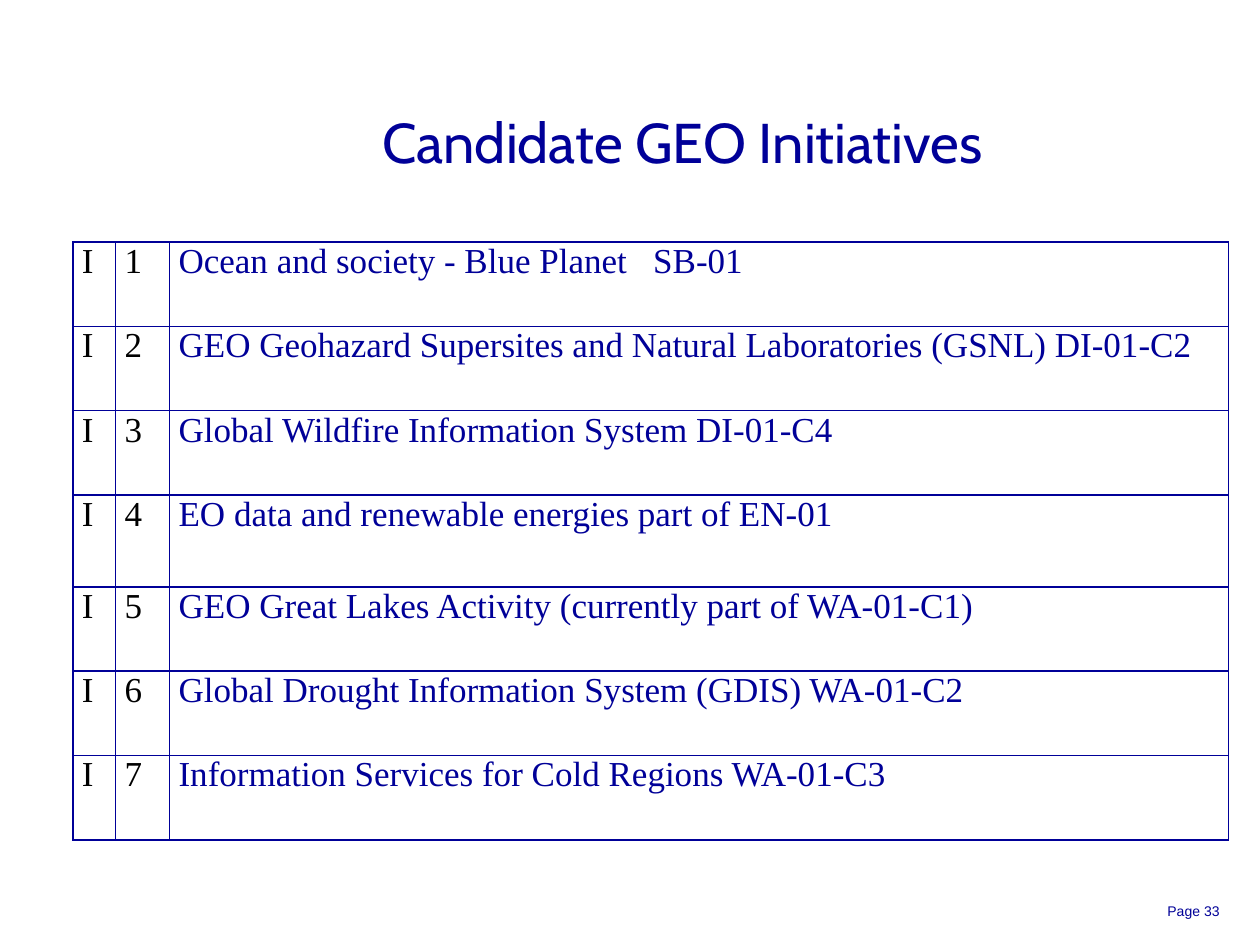
from lxml import etree
from pptx import Presentation
from pptx.dml.color import RGBColor
from pptx.enum.text import MSO_ANCHOR, PP_ALIGN
from pptx.oxml.ns import qn
from pptx.util import Cm, Pt

LEFT, CENTER, RIGHT = PP_ALIGN.LEFT, PP_ALIGN.CENTER, PP_ALIGN.RIGHT
TOP, MIDDLE = MSO_ANCHOR.TOP, MSO_ANCHOR.MIDDLE
NAVY, BLACK = "000098", "000000"
SERIF = "Times New Roman"
COLUMN_WIDTHS = [0.86, 1.09, 21.34]
ROW_HEIGHTS = [1.7, 1.7, 1.7, 1.85, 1.7, 1.7, 1.7]
INITIATIVES = [
    "Ocean and society - Blue Planet   SB-01",
    "GEO Geohazard Supersites and Natural Laboratories (GSNL) DI-01-C2",
    "Global Wildfire Information System DI-01-C4",
    "EO data and renewable energies part of EN-01",
    "GEO Great Lakes Activity (currently part of WA-01-C1)",
    "Global Drought Information System (GDIS) WA-01-C2",
    "Information Services for Cold Regions WA-01-C3",
]


def rgb(color):
    return RGBColor.from_string(color)


def write(tf, text, size=20, font=SERIF, color=NAVY, align=LEFT):
    p = tf.paragraphs[0]
    p.alignment = align
    r = p.add_run()
    r.text = text
    r.font.size = Pt(size)
    r.font.name = font
    r.font.color.rgb = rgb(color)


def add_text(s, text, left, top, width, height, **text_format):
    sp = s.shapes.add_textbox(Cm(left), Cm(top), Cm(width), Cm(height))
    tf = sp.text_frame
    tf.word_wrap = True
    tf.vertical_anchor = MIDDLE
    tf.margin_top = tf.margin_bottom = 0
    write(tf, text, **text_format)


def set_borders(cell, color, width):
    tc_pr = cell._tc.get_or_add_tcPr()
    for side in ("a:lnL", "a:lnR", "a:lnT", "a:lnB"):
        ln = etree.SubElement(tc_pr, qn(side), w=str(Pt(width)))
        fill = etree.SubElement(ln, qn("a:solidFill"))
        etree.SubElement(fill, qn("a:srgbClr"), val=color)


def fill_cell(cell, text, color):
    cell.margin_left = cell.margin_right = Cm(0.18)
    cell.margin_top = cell.margin_bottom = 0
    cell.vertical_anchor = TOP
    set_borders(cell, NAVY, 1)
    cell.fill.background()
    write(cell.text_frame, text, color=color)


def add_initiatives(s, left, top):
    table = s.shapes.add_table(
        len(INITIATIVES), len(COLUMN_WIDTHS), Cm(left), Cm(top),
        Cm(sum(COLUMN_WIDTHS)), Cm(sum(ROW_HEIGHTS)),
    ).table
    table.first_row = table.horz_banding = False
    for column, width in zip(table.columns, COLUMN_WIDTHS):
        column.width = Cm(width)
    for number, (row, height, name) in enumerate(
            zip(table.rows, ROW_HEIGHTS, INITIATIVES), start=1):
        row.height = Cm(height)
        values = [("I", BLACK), (str(number), BLACK), (name, NAVY)]
        for cell, (text, color) in zip(row.cells, values):
            fill_cell(cell, text, color)


def main():
    prs = Presentation()
    prs.slide_width, prs.slide_height = Cm(25.4), Cm(19.05)
    s = prs.slides.add_slide(prs.slide_layouts[6])
    add_text(s, "Page 33", 19.56, 18.06, 5.28, 0.61,
             size=8, font="Arial", align=RIGHT)
    add_text(s, "Candidate GEO Initiatives", 2.97, 2.11, 21.59, 1.47,
             size=32, font="Cabin", align=CENTER)
    add_initiatives(s, 1.47, 4.88)
    prs.save("out.pptx")


if __name__ == "__main__":
    main()
